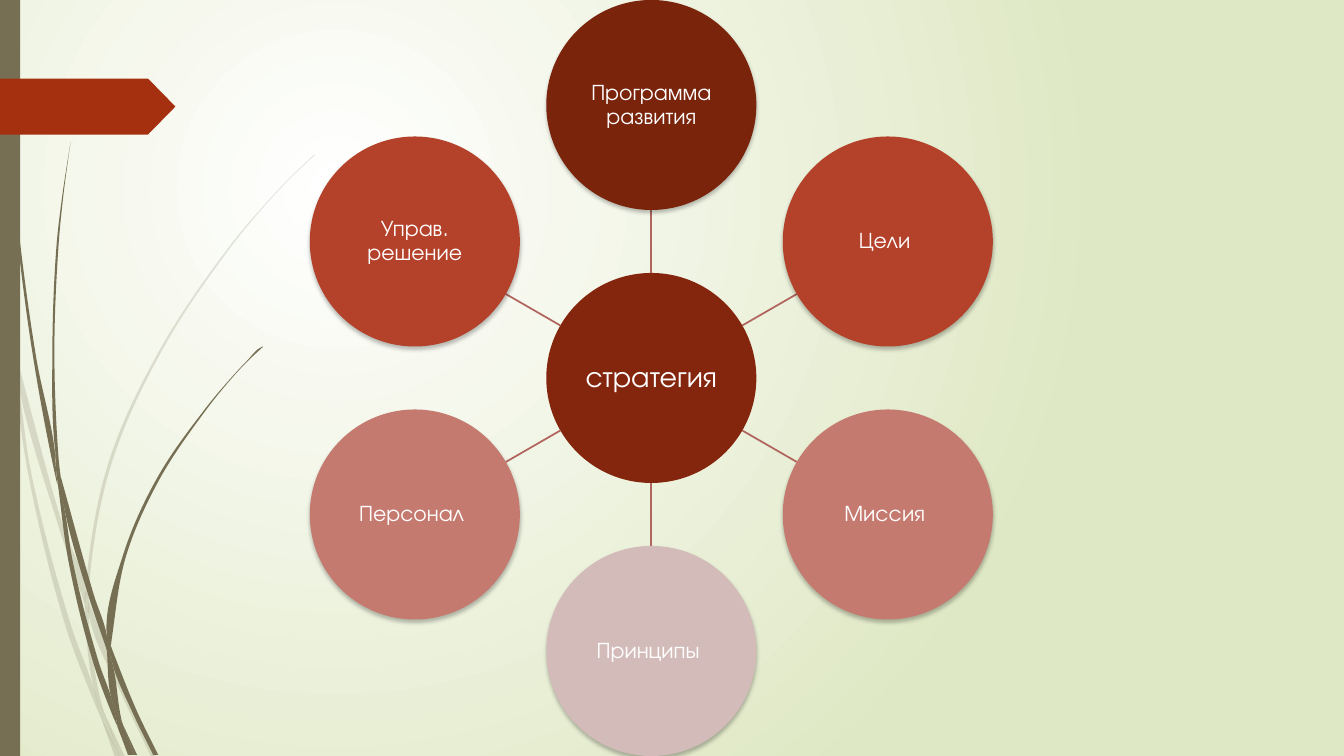
from dataclasses import dataclass
from math import atan2, cos, dist, pi, radians, sin

from lxml.etree import SubElement
from pptx import Presentation
from pptx.dml.color import RGBColor
from pptx.enum.shapes import MSO_CONNECTOR, MSO_SHAPE
from pptx.enum.text import MSO_ANCHOR, PP_ALIGN
from pptx.oxml.ns import qn
from pptx.util import Emu, Inches, Pt

# Fine grid: 750 rows on the slide's height, square cells
COLS, ROWS = 1333, 750
CELL = Inches(7.5) / ROWS
HUB_X, HUB_Y = 646, ROWS / 2
RADIUS = ROWS / 7.2
RING = ROWS / 2 - RADIUS
FONT = "TeX Gyre Adventor"
CORNER = pi / 4  # sharper turns of an outline stay corners
Point = tuple[float, float]

COLORS = {
    "white": "FFFFFF", "backdrop": "DFE8C4", "olive": "766F54", "tag": "A53010",
    "spoke": "B1655E", "shadow": "000000", "hub": "84260D", "dark": "7A240C",
    "red": "B4412A", "rose": "C57A70", "pale": "D3BBB9",
}


@dataclass(frozen=True)
class Satellite:
    text: str
    color: str


@dataclass(frozen=True)
class Tuft:
    """Grass leaves of one opacity, each a closed outline of (column, row)."""
    opacity: int
    leaves: tuple[tuple[Point, ...], ...]


# Clockwise from the top
SATELLITES = (
    Satellite("Программа развития", "dark"),
    Satellite("Цели ", "red"),
    Satellite("Миссия ", "rose"),
    Satellite("Принципы ", "pale"),
    Satellite("Персонал ", "rose"),
    Satellite("Управ. решение", "red"),
)

PALE_TUFT = Tuft(20, (
    ((11, 350), (9, 322), (0, 282), (0, 299), (10, 344)),
    ((58, 522), (84, 599), (85, 586), (62, 520), (14, 345), (17, 376)),
    ((92, 607), (88, 596), (88, 610), (123, 694), (150, 751), (155, 751), (127, 692)),
    ((119, 751), (124, 751), (105, 711)),
    ((93, 683), (70, 619), (31, 469), (17, 376), (11, 350), (28, 470), (65, 621),
     (92, 693), (101, 714), (99, 707)),
    ((84, 599), (87, 646), (93, 683), (96, 692), (105, 711), (103, 706), (91, 646),
     (88, 610), (88, 608)),
    ((88, 584), (110, 462), (160, 349), (229, 245), (268, 198), (290, 175), (312, 154),
     (312, 153), (289, 175), (268, 197), (228, 244), (158, 348), (107, 461), (85, 584),
     (85, 586), (88, 596)),
    ((101, 714), (114, 751), (119, 751)),
    ((88, 608), (88, 610), (88, 596), (85, 586), (84, 599)),
    ((96, 692), (93, 683), (99, 707), (101, 714), (119, 751), (105, 711)),
))

DARK_TUFT = Tuft(100, (
    ((7, 110), (17, 233), (33, 355), (56, 477), (57, 481), (55, 457), (55, 453),
     (36, 355), (19, 232), (8, 109), (5, 48), (4, 0), (3, 0), (4, 48)),
    ((88, 592), (106, 645), (106, 633), (106, 631), (93, 590), (60, 472), (64, 505)),
    ((113, 649), (110, 641), (111, 656), (132, 708), (152, 749), (157, 749), (136, 706)),
    ((110, 691), (98, 657), (72, 556), (64, 505), (57, 477), (68, 557), (93, 659),
     (111, 708), (117, 722), (116, 717)),
    ((60, 472), (58, 453), (54, 349), (58, 245), (63, 193), (70, 141), (62, 193),
     (56, 245), (52, 349), (55, 449)),
    ((133, 749), (136, 749), (122, 719)),
    ((57, 477), (64, 505), (60, 472), (55, 449), (55, 453)),
    ((111, 633), (125, 552), (158, 476), (205, 406), (231, 374), (245, 359), (261, 344),
     (260, 344), (245, 358), (231, 373), (204, 405), (156, 474), (122, 551), (106, 631),
     (110, 641)),
    ((117, 722), (127, 749), (131, 749)),
    ((106, 645), (110, 691), (116, 706), (122, 719), (121, 716), (111, 656), (109, 651)),
    ((106, 645), (109, 651), (111, 656), (110, 641), (106, 631), (106, 633)),
    ((116, 706), (110, 691), (116, 717), (117, 722), (130, 749), (133, 749), (122, 719)),
))


def grid(cells: float) -> Emu:
    return Emu(round(cells * CELL))


def rgb(name: str) -> RGBColor:
    return RGBColor.from_string(COLORS[name])


def paint(shape, color: str, opacity: int = 100) -> None:
    """Flat fill without outline or shadow."""
    shape.shadow.inherit = False
    shape.line.fill.background()
    shape.fill.solid()
    shape.fill.fore_color.rgb = rgb(color)
    if opacity < 100:
        clr = shape._element.spPr.find(qn("a:solidFill"))[0]
        SubElement(clr, qn("a:alpha"), val=str(opacity * 1000))


def paint_background(s) -> None:
    """Circular gradient around the upper left quarter point."""
    fill = s.background.fill
    fill.gradient()
    for stop, color in zip(fill.gradient_stops, ("white", "backdrop")):
        stop.color.rgb = rgb(color)
    grad = s.background._cSld.find(".//" + qn("a:gradFill"))
    lin = grad.find(qn("a:lin"))
    circle = SubElement(grad, qn("a:path"), path="circle")
    SubElement(circle, qn("a:fillToRect"), l="50000", t="50000", r="100000", b="100000")
    grad.replace(lin, circle)


def heading(a: Point, b: Point) -> float:
    return atan2(b[1] - a[1], b[0] - a[0])


def step(a: Point, angle: float, length: float) -> Point:
    return a[0] + length * cos(angle), a[1] + length * sin(angle)


def tangents(before: Point, at: Point, after: Point) -> tuple[float, float]:
    """Headings into and out of a point: shared unless it is a corner."""
    into, out = heading(before, at), heading(at, after)
    turn = (out - into + pi) % (2 * pi) - pi
    return (into, out) if abs(turn) > CORNER else (into + turn / 2,) * 2


def add_leaf(s, leaf: tuple[Point, ...], opacity: int) -> None:
    """Closed outline of cubic curves through the leaf's points."""
    n = len(leaf)
    turns = [tangents(leaf[i - 1], leaf[i], leaf[(i + 1) % n]) for i in range(n)]
    points = []
    for i, a in enumerate(leaf):
        j = (i + 1) % n
        third = dist(a, leaf[j]) / 3
        points += [step(a, turns[i][1], third), step(leaf[j], turns[j][0], -third), leaf[j]]
    builder = s.shapes.build_freeform(*map(grid, leaf[0]), scale=1.0)
    builder.add_line_segments([tuple(map(grid, p)) for p in points], close=True)
    sp = builder.convert_to_shape()
    paint(sp, "olive", opacity)

    # Every three line ends become the points of one curve
    path = sp._element.spPr.find(".//" + qn("a:path"))
    lines = path.findall(qn("a:lnTo"))
    for trio in zip(lines[::3], lines[1::3], lines[2::3]):
        curve = SubElement(path, qn("a:cubicBezTo"))
        path.replace(trio[0], curve)
        for line in trio:
            curve.append(line[0])
        for line in trio[1:]:
            path.remove(line)


def add_circle(s, x: float, y: float, text: str, color: str, size: int):
    sp = s.shapes.add_shape(MSO_SHAPE.OVAL, grid(x - RADIUS), grid(y - RADIUS),
                            grid(2 * RADIUS), grid(2 * RADIUS))
    paint(sp, color)
    tf = sp.text_frame
    tf.word_wrap = True
    tf.vertical_anchor = MSO_ANCHOR.MIDDLE
    tf.margin_left = tf.margin_right = tf.margin_top = tf.margin_bottom = grid(1)
    p = tf.paragraphs[0]
    p.text = text
    p.alignment = PP_ALIGN.CENTER
    p.line_spacing = 0.9
    p.font.name = FONT
    p.font.size = Pt(size)
    p.font.color.rgb = rgb("white")
    return sp


def add_shadow(sp) -> None:
    effects = sp._element.spPr.find(qn("a:effectLst"))
    shadow = SubElement(effects, qn("a:outerShdw"), blurRad=str(Pt(3)), dist=str(Pt(2)),
                        dir="5400000", rotWithShape="0")
    clr = SubElement(shadow, qn("a:srgbClr"), val=COLORS["shadow"])
    SubElement(clr, qn("a:alpha"), val="25000")


def add_spoke(s, dx: float, dy: float) -> None:
    """Line from the hub's rim to the satellite's rim along a unit direction."""
    ends = [grid(v) for d in (RADIUS, RING - RADIUS)
            for v in (HUB_X + d * dx, HUB_Y + d * dy)]
    line = s.shapes.add_connector(MSO_CONNECTOR.STRAIGHT, *ends)
    line.line.color.rgb = rgb("spoke")
    line.line.width = Pt(1.25)
    SubElement(line._element.spPr, qn("a:effectLst"))


def main() -> None:
    prs = Presentation()
    prs.slide_width, prs.slide_height = grid(COLS), grid(ROWS)
    s = prs.slides.add_slide(prs.slide_layouts[6])
    paint_background(s)
    # Grass, side bar and tag
    for tuft in (PALE_TUFT, DARK_TUFT):
        for leaf in tuft.leaves:
            add_leaf(s, leaf, tuft.opacity)
    paint(s.shapes.add_shape(MSO_SHAPE.RECTANGLE, 0, 0, grid(20), grid(ROWS)), "olive")
    tag = s.shapes.add_shape(MSO_SHAPE.PENTAGON, 0, grid(78), grid(174), grid(55.5))
    tag.adjustments[0] = 0.49
    paint(tag, "tag")
    # Hub with its ring of satellites
    add_circle(s, HUB_X, HUB_Y, "стратегия", "hub", 21)
    for i, sat in enumerate(SATELLITES):
        angle = radians(360 / len(SATELLITES) * i)
        dx, dy = sin(angle), -cos(angle)
        add_spoke(s, dx, dy)
        add_shadow(add_circle(s, HUB_X + RING * dx, HUB_Y + RING * dy, sat.text, sat.color, 16))
    prs.save("out.pptx")


if __name__ == "__main__":
    main()
